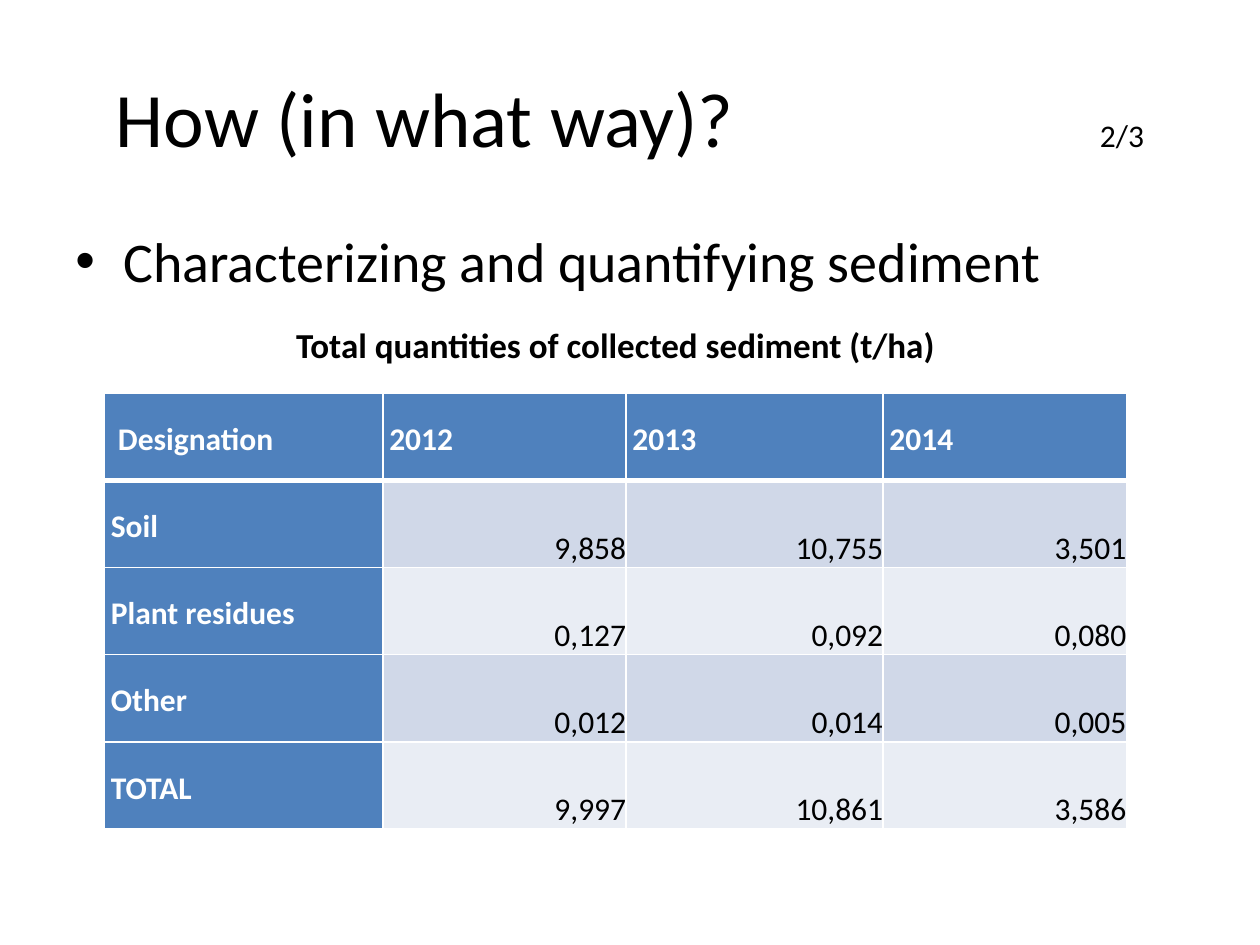
from dataclasses import dataclass

from lxml.etree import SubElement
from pptx import Presentation
from pptx.dml.color import RGBColor as RGB
from pptx.enum.text import MSO_ANCHOR as ANCHOR, PP_ALIGN as ALIGN
from pptx.oxml.ns import qn
from pptx.util import Inches, Pt


@dataclass(frozen=True)
class Theme:
    font: str = "Calibri"
    ink: RGB = RGB(0, 0, 0)
    white: RGB = RGB(255, 255, 255)
    header: RGB = RGB.from_string("4F81BD")
    bands: tuple = (RGB.from_string("D0D8E8"), RGB.from_string("E9EDF4"))
    title: int = 44
    body: int = 32
    caption: int = 20
    small: int = 18


THEME = Theme()


def add_text(paragraph, text, size, color=THEME.ink, bold=False):
    run = paragraph.add_run()
    run.text = text
    for name, value in {"name": THEME.font, "size": Pt(size), "bold": bold}.items():
        setattr(run.font, name, value)
    run.font.color.rgb = color


def add_border(cell, side, width):
    line = SubElement(cell._tc.get_or_add_tcPr(), qn(f"a:{side}"), w=str(Pt(width)))
    fill = SubElement(line, qn("a:solidFill"))
    SubElement(fill, qn("a:srgbClr"), val=str(THEME.white))


prs = Presentation()
prs.slide_width, prs.slide_height = Inches(10), Inches(7.5)
slide = prs.slides.add_slide(prs.slide_layouts[5])

# Title, with the page count at a right-hand tab stop
title = slide.shapes.title
title_box = {"left": 0.5, "top": 0.3, "width": 9, "height": 1.25}
for name, value in title_box.items():
    setattr(title, name, Inches(value))
title.text_frame.vertical_anchor = ANCHOR.MIDDLE
title.text_frame.margin_left = Inches(0.42)
heading = title.text_frame.paragraphs[0]
heading.alignment = ALIGN.LEFT
tabs = SubElement(heading._p.get_or_add_pPr(), qn("a:tabLst"))
SubElement(tabs, qn("a:tab"), pos=str(Inches(8.16)), algn="r")
add_text(heading, "How (in what way)?\t", THEME.title)
add_text(heading, "2/3", THEME.small)

# Bullet
body = slide.shapes.add_textbox(Inches(0.5), Inches(1.75), Inches(9), Inches(4.95))
body.text_frame.word_wrap = True
bullet = body.text_frame.paragraphs[0]
bullet.alignment = ALIGN.JUSTIFY
bullet.space_before = Pt(6.4)
bullet_format = bullet._p.get_or_add_pPr()
bullet_format.set("marL", str(Inches(0.38)))
bullet_format.set("indent", str(Inches(-0.38)))
SubElement(bullet_format, qn("a:buFont"), typeface="Arial")
SubElement(bullet_format, qn("a:buChar"), char="•")
add_text(bullet, "Characterizing and quantifying sediment", THEME.body)

# Sediment table
ROWS = [
    (" Designation", "2012", "2013", "2014"),
    ("Soil", "9,858", "10,755", "3,501"),
    ("Plant residues", "0,127", "0,092", "0,080"),
    ("Other", "0,012", "0,014", "0,005"),
    ("TOTAL", "9,997", "10,861", "3,586"),
]
COLUMN_WIDTHS = (2.21, 1.93, 2.04, 1.93)
sediment = slide.shapes.add_table(
    len(ROWS), len(COLUMN_WIDTHS), Inches(0.83), Inches(3.12), Inches(8.11), Inches(3.46)
).table
sediment.first_col = True
for column, width in zip(sediment.columns, COLUMN_WIDTHS):
    column.width = Inches(width)

for r, row in enumerate(ROWS):
    for c, text in enumerate(row):
        cell = sediment.cell(r, c)
        is_label = r == 0 or c == 0
        side_margin = Inches(0.05 if is_label else 0)
        cell_format = {
            "margin_left": side_margin,
            "margin_right": side_margin,
            "margin_top": 0,
            "margin_bottom": 0,
            "vertical_anchor": ANCHOR.MIDDLE if is_label else ANCHOR.BOTTOM,
        }
        for name, value in cell_format.items():
            setattr(cell, name, value)
        for side in ("lnL", "lnR", "lnT", "lnB"):
            header_rule = (r, side) in ((0, "lnB"), (1, "lnT"))
            add_border(cell, side, 3 if header_rule else 1)
        cell.fill.solid()
        cell.fill.fore_color.rgb = THEME.header if is_label else THEME.bands[(r - 1) % 2]

        entry = cell.text_frame.paragraphs[0]
        if is_label:
            entry.line_spacing = 1.15
            entry.space_before = Pt(6)
        else:
            entry.alignment = ALIGN.RIGHT
        add_text(entry, text, THEME.small, THEME.white if is_label else THEME.ink, is_label)

# Table caption
caption = slide.shapes.add_textbox(Inches(0.83), Inches(2.52), Inches(8.11), Inches(0.44))
caption.text_frame.word_wrap = True
caption_line = caption.text_frame.paragraphs[0]
caption_line.alignment = ALIGN.CENTER
add_text(caption_line, "Total quantities of collected sediment (t/ha)", THEME.caption, bold=True)

prs.save("out.pptx")
